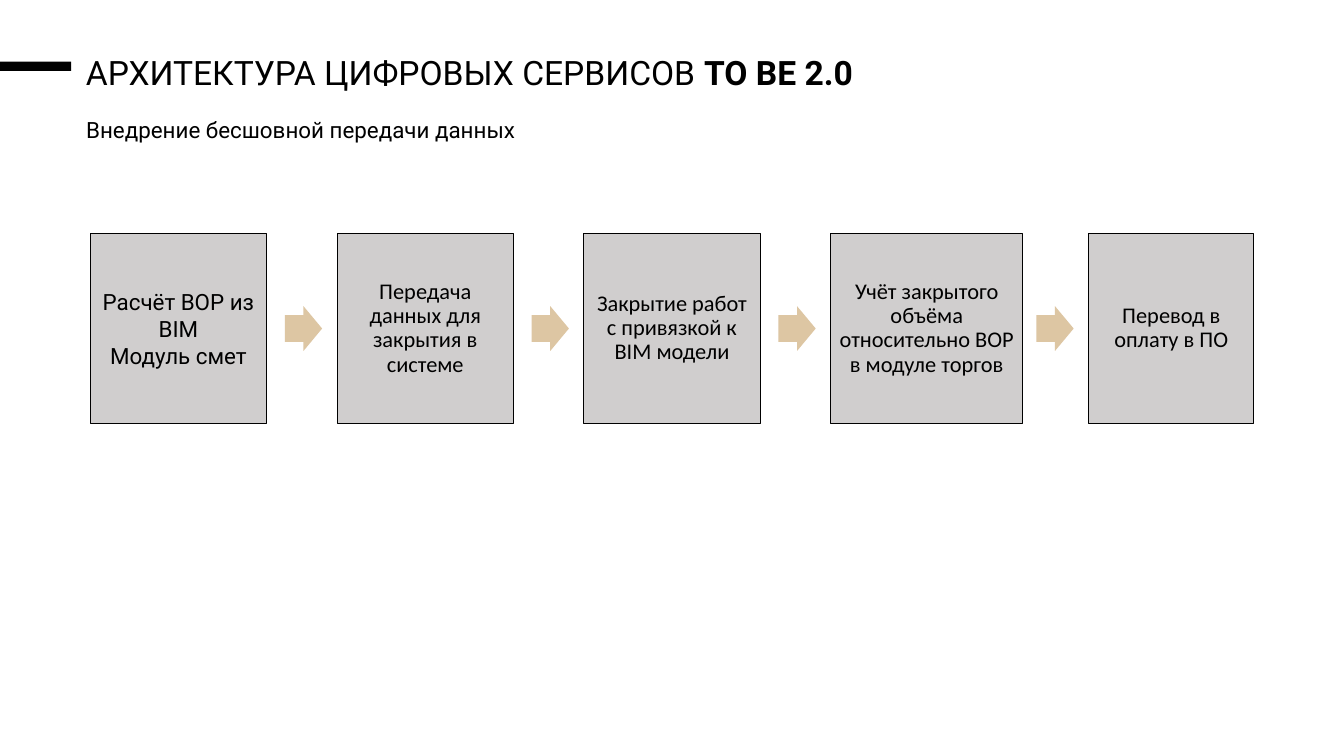
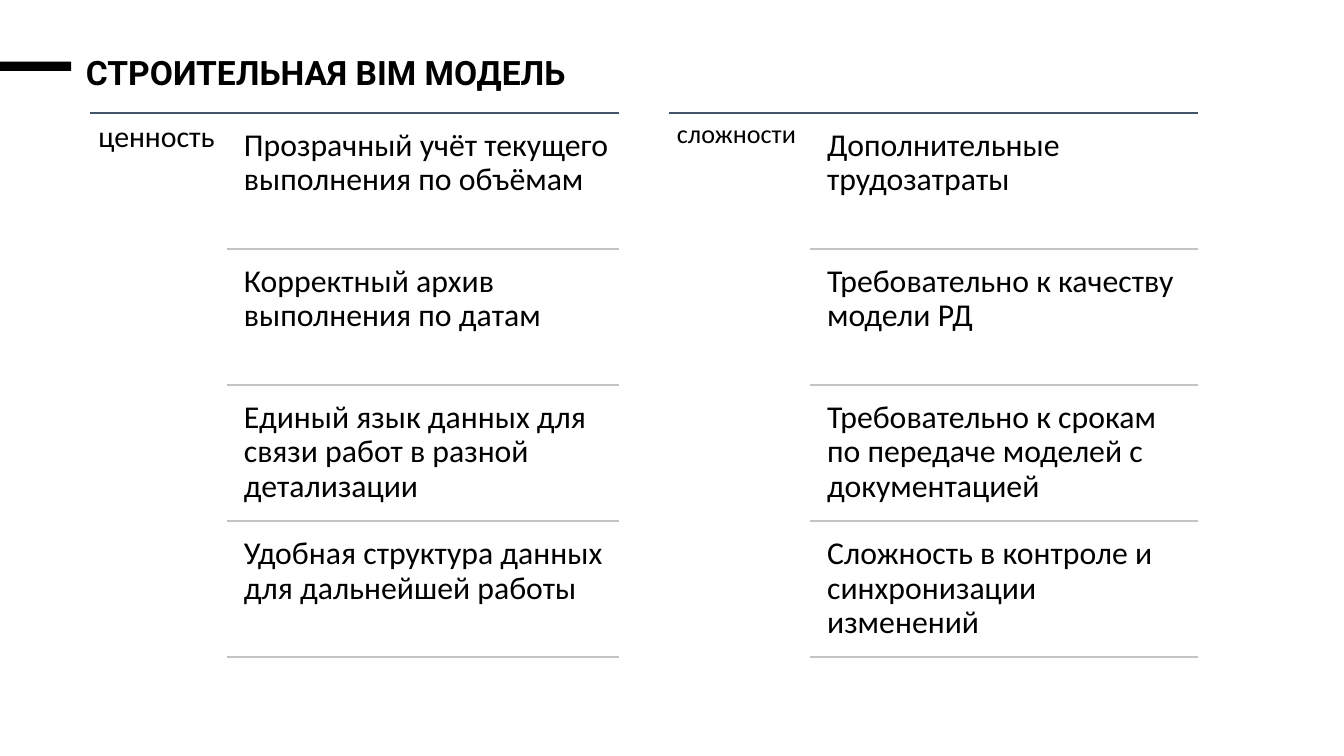
from dataclasses import dataclass

from lxml.etree import SubElement
from pptx import Presentation
from pptx.dml.color import RGBColor
from pptx.enum.shapes import MSO_CONNECTOR, MSO_SHAPE
from pptx.enum.text import MSO_ANCHOR, PP_ALIGN
from pptx.oxml.ns import qn
from pptx.slide import Slide
from pptx.text.text import TextFrame
from pptx.util import Pt


@dataclass(frozen=True)
class Theme:
    """Colours, fonts and type sizes of the deck."""

    ink: RGBColor = RGBColor(0x00, 0x00, 0x00)
    box: RGBColor = RGBColor(0xD0, 0xCE, 0xCE)
    arrow: RGBColor = RGBColor(0xDD, 0xC6, 0xA3)
    header_rule: RGBColor = RGBColor(0x44, 0x54, 0x6A)
    row_rule: RGBColor = RGBColor(0xC1, 0xC3, 0xC7)
    head_font: str = "Roboto"
    body_font: str = "Calibri"
    title: float = 18
    item: float = 17
    small: float = 12


@dataclass(frozen=True)
class Frame:
    """Position and size in points."""

    left: float
    top: float
    width: float
    height: float

    def lengths(self) -> tuple[Pt, Pt, Pt, Pt]:
        """Return the four lengths in drawing order."""
        return Pt(self.left), Pt(self.top), Pt(self.width), Pt(self.height)


@dataclass(frozen=True)
class Step:
    """One box of the process chain."""

    text: str
    left: float
    width: float = 94.5
    font: str = "Calibri"
    spacing: float = 0.9


@dataclass(frozen=True)
class Column:
    """A labelled list of ruled rows."""

    label: str
    label_size: float
    label_inset: float
    left: float
    split: float
    right: float
    items: tuple[str, ...]


THEME = Theme()
STEP_TOP, STEP_HEIGHT = 125.2, 101.6
ARROW_WIDTH, ARROW_HEIGHT, ARROW_LEAD = 20, 24, 28
LIST_TOP, ROW_PITCH, ROW_HEIGHT, ROW_GAP = 60.6, 72.9, 69.4, 3.5

STEPS = (
    Step("Расчёт ВОР из BIM\nМодуль смет", 48.4, font="Roboto", spacing=1),
    Step("Передача данных для закрытия в системе", 180.6),
    Step("Закрытие работ с привязкой к BIM модели", 312.8),
    Step("Учёт закрытого объёма относительно ВОР в модуле торгов", 445, 103),
    Step("Перевод в оплату в ПО", 583.2, 88.6),
)

COLUMNS = (
    Column("ценность", 16, 4.8, 48, 121.6, 331.8, (
        "Прозрачный учёт текущего выполнения по объёмам",
        "Корректный архив выполнения по датам",
        "Единый язык данных для связи работ в разной детализации",
        "Удобная структура данных для дальнейшей работы",
    )),
    Column("сложности", 14, 4.2, 358.4, 434, 642, (
        "Дополнительные трудозатраты",
        "Требовательно к качеству модели РД",
        "Требовательно к срокам по передаче моделей с документацией",
        "Сложность в контроле и синхронизации изменений",
    )),
)


def write(tf: TextFrame, text: str, size: float, font: str,
          inset: tuple[float, float], spacing: float = 1,
          align: PP_ALIGN = PP_ALIGN.LEFT,
          anchor: MSO_ANCHOR = MSO_ANCHOR.TOP) -> None:
    """Fill a text frame and format its paragraphs."""
    tf.word_wrap = True
    tf.margin_left = tf.margin_right = Pt(inset[0])
    tf.margin_top = tf.margin_bottom = Pt(inset[1])
    tf.vertical_anchor = anchor
    tf.text = text
    for p in tf.paragraphs:
        p.alignment = align
        p.line_spacing = spacing
        for r in p.runs:
            r.font.size = Pt(size)
            r.font.name = font
            r.font.color.rgb = THEME.ink


def add_text(s: Slide, frame: Frame, text: str, size: float, font: str,
             inset: tuple[float, float], spacing: float = 1) -> TextFrame:
    """Add a wrapped text box and return its text frame."""
    tf = s.shapes.add_textbox(*frame.lengths()).text_frame
    write(tf, text, size, font, inset, spacing)
    return tf


def add_block(s: Slide, kind: MSO_SHAPE, frame: Frame, fill: RGBColor):
    """Add a flat filled shape without an outline."""
    sp = s.shapes.add_shape(kind, *frame.lengths())
    sp.shadow.inherit = False
    sp.fill.solid()
    sp.fill.fore_color.rgb = fill
    sp.line.fill.background()
    return sp


def add_rule(s: Slide, left: float, right: float, y: float,
             color: RGBColor) -> None:
    """Add a horizontal rule."""
    cn = s.shapes.add_connector(MSO_CONNECTOR.STRAIGHT,
                                Pt(left), Pt(y), Pt(right), Pt(y))
    cn.line.color.rgb = color
    cn.line.width = Pt(1)
    SubElement(cn._element.spPr, qn("a:effectLst"))


def add_titled_slide(prs: Presentation, title: str, bold: str) -> Slide:
    """Add a blank slide with the marker bar and a title ending in bold."""
    s = prs.slides.add_slide(prs.slide_layouts[6])
    add_block(s, MSO_SHAPE.RECTANGLE, Frame(0, 33, 38.2, 5), THEME.ink)
    tf = add_text(s, Frame(39, 24, 485, 29), title + bold, THEME.title,
                  THEME.head_font, (7.2, 3.6))
    p = tf.paragraphs[0]
    r = p.runs[0]
    if title:
        r.text = title
        r = p.add_run()
        r.text = bold
        r.font.size = Pt(THEME.title)
        r.font.name = THEME.head_font
        r.font.color.rgb = THEME.ink
    r.font.bold = True
    return s


def draw_step(s: Slide, step: Step) -> None:
    """Draw one process box."""
    frame = Frame(step.left, STEP_TOP, step.width, STEP_HEIGHT)
    sp = add_block(s, MSO_SHAPE.RECTANGLE, frame, THEME.box)
    sp.line.color.rgb = THEME.ink
    sp.line.width = Pt(0.5)
    write(sp.text_frame, step.text, THEME.small, step.font, (3.6, 3.6),
          step.spacing, PP_ALIGN.CENTER, MSO_ANCHOR.MIDDLE)


def draw_arrow(s: Slide, target: Step) -> None:
    """Draw the arrow that leads into a step."""
    top = STEP_TOP + (STEP_HEIGHT - ARROW_HEIGHT) / 2
    frame = Frame(target.left - ARROW_LEAD, top, ARROW_WIDTH, ARROW_HEIGHT)
    sp = add_block(s, MSO_SHAPE.RIGHT_ARROW, frame, THEME.arrow)
    sp.adjustments[0] = 0.6
    sp.adjustments[1] = 0.5


def draw_column(s: Slide, col: Column) -> None:
    """Draw a column label and its ruled rows."""
    add_rule(s, col.left, col.right, LIST_TOP, THEME.header_rule)
    add_text(s, Frame(col.left, LIST_TOP, col.split - col.left, 294.4),
             col.label, col.label_size, THEME.body_font,
             (col.label_inset, col.label_inset), 0.9)
    left = col.split + 4
    for i, item in enumerate(col.items):
        top = LIST_TOP + i * ROW_PITCH
        add_text(s, Frame(left, top + ROW_GAP, col.right - left, ROW_HEIGHT),
                 item, THEME.item, THEME.body_font, (5.1, 5.1), 0.9)
        add_rule(s, col.split, col.right, top + ROW_PITCH, THEME.row_rule)


def build_architecture(prs: Presentation) -> None:
    """Build the process chain slide."""
    s = add_titled_slide(prs, "АРХИТЕКТУРА ЦИФРОВЫХ СЕРВИСОВ ", "TO BE 2.0")
    add_text(s, Frame(41, 59.6, 251.3, 22), "Внедрение бесшовной передачи данных",
             THEME.small, THEME.head_font, (5.2, 2.9))
    for i, step in enumerate(STEPS):
        if i:
            draw_arrow(s, step)
        draw_step(s, step)


def build_model(prs: Presentation) -> None:
    """Build the slide that weighs value against difficulties."""
    s = add_titled_slide(prs, "", "СТРОИТЕЛЬНАЯ BIM МОДЕЛЬ")
    for col in COLUMNS:
        draw_column(s, col)


def main() -> None:
    """Build and save the deck."""
    prs = Presentation()
    prs.slide_width, prs.slide_height = Pt(720), Pt(405)
    build_architecture(prs)
    build_model(prs)
    prs.save("out.pptx")


if __name__ == "__main__":
    main()
